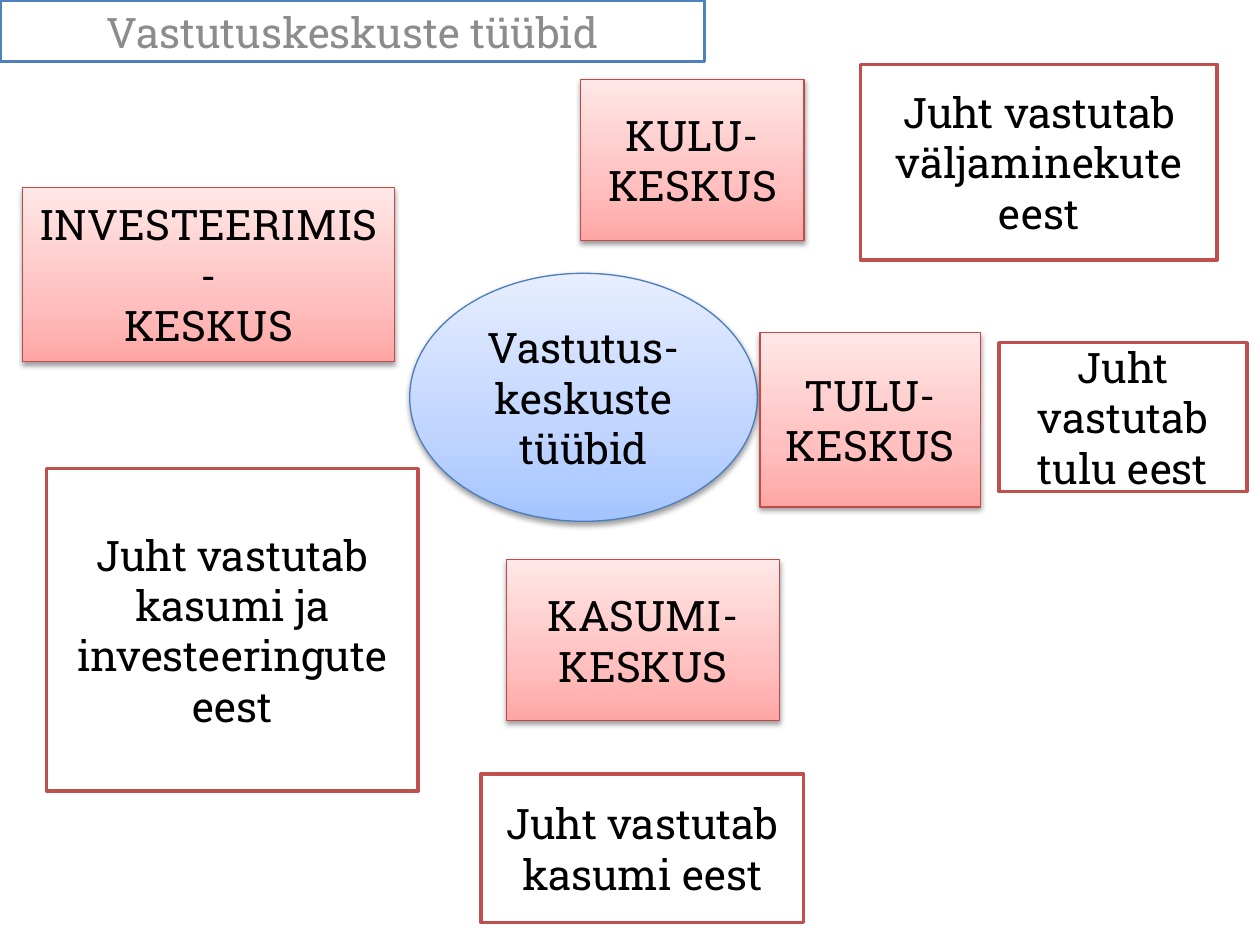
from copy import deepcopy
from dataclasses import dataclass

from lxml import etree
from pptx import Presentation
from pptx.dml.color import RGBColor
from pptx.enum.shapes import MSO_SHAPE
from pptx.enum.text import MSO_ANCHOR, PP_ALIGN
from pptx.oxml.ns import qn
from pptx.util import Cm, Pt

RECTANGLE, OVAL = MSO_SHAPE.RECTANGLE, MSO_SHAPE.OVAL
TOP, MIDDLE = MSO_ANCHOR.TOP, MSO_ANCHOR.MIDDLE
CENTER = PP_ALIGN.CENTER

COLOURS = {
    "white": "FFFFFF",
    "black": "000000",
    "grey": "8C8C8C",
    "title line": "4F81BD",
    "hub line": "4B7EBC",
    "centre line": "BF4C48",
    "duty line": "C0504D",
    "hub dark": "A4C4FF",
    "hub middle": "BFD4FF",
    "hub light": "E6EEFF",
    "centre dark": "FFA6A5",
    "centre middle": "FFC0BF",
    "centre light": "FFE7E7",
}
STOP_POSITIONS = (0, 0.35, 1)
FONT_FORMAT = {"name": "Roboto Slab", "size": Pt(24)}


@dataclass(frozen=True)
class Style:
    """Look shared by boxes of one kind."""

    fills: tuple[str, ...]
    line: str
    line_width: float
    outline: MSO_SHAPE = RECTANGLE
    text_colour: str = "black"
    anchor: MSO_ANCHOR = MIDDLE


@dataclass(frozen=True)
class Box:
    """Text box with its place in centimetres."""

    text: str
    left: float
    top: float
    width: float
    height: float
    style: Style


TITLE = Style(("white",), "title line", 2, text_colour="grey", anchor=TOP)
HUB = Style(("hub dark", "hub middle", "hub light"), "hub line", 0.75, OVAL)
CENTRE = Style(("centre dark", "centre middle", "centre light"), "centre line", 0.75)
DUTY = Style(("white",), "duty line", 2)

BOXES = (
    Box("Vastutuskeskuste tüübid", 0, 0, 14.2, 1.24, TITLE),
    Box("Vastutus-keskuste tüübid", 8.26, 5.51, 7.01, 5, HUB),
    Box("KULU-KESKUS", 11.71, 1.6, 4.5, 3.25, CENTRE),
    Box("TULU-KESKUS", 15.32, 6.71, 4.45, 3.51, CENTRE),
    Box("KASUMI-KESKUS", 10.21, 11.28, 5.51, 3.25, CENTRE),
    Box("INVESTEERIMIS-\nKESKUS", 0.46, 3.78, 7.49, 3.51, CENTRE),
    Box("Juht vastutab väljaminekute eest", 17.35, 1.3, 7.19, 3.94, DUTY),
    Box("Juht vastutab tulu eest", 20.14, 6.91, 5, 3, DUTY),
    Box("Juht vastutab kasumi eest", 9.7, 15.6, 6.5, 3, DUTY),
    Box("Juht vastutab kasumi ja investeeringute\neest", 0.94, 9.45, 7.49, 6.5, DUTY),
)


def colour(name: str) -> RGBColor:
    """Return the named colour."""
    return RGBColor.from_string(COLOURS[name])


def add_gradient(shape, names: tuple[str, ...]) -> None:
    """Fill the shape with three colours from bottom to top."""
    shape.fill.gradient()
    shape.fill.gradient_angle = 90
    stop_list = shape._element.spPr.find(".//" + qn("a:gsLst"))
    stop_list.append(deepcopy(stop_list[0]))
    for stop, name, position in zip(shape.fill.gradient_stops, names, STOP_POSITIONS):
        stop.color.rgb = colour(name)
        stop.position = position


def add_shadow(shape) -> None:
    """Put a soft shadow below the shape."""
    effects = shape._element.spPr.find(qn("a:effectLst"))
    shadow = etree.SubElement(
        effects, qn("a:outerShdw"),
        {"blurRad": "40000", "dist": "20000", "dir": "5400000", "rotWithShape": "0"},
    )
    shade = etree.SubElement(shadow, qn("a:srgbClr"), {"val": COLOURS["black"]})
    etree.SubElement(shade, qn("a:alpha"), {"val": "38000"})


def add_box(slide, box: Box) -> None:
    """Draw one box with its text."""
    style = box.style
    place = [Cm(length) for length in (box.left, box.top, box.width, box.height)]
    shape = slide.shapes.add_shape(style.outline, *place)
    shape.shadow.inherit = False
    shape.line.color.rgb = colour(style.line)
    shape.line.width = Pt(style.line_width)
    if len(style.fills) > 1:
        add_gradient(shape, style.fills)
        add_shadow(shape)
    else:
        shape.fill.solid()
        shape.fill.fore_color.rgb = colour(style.fills[0])
    frame = shape.text_frame
    frame.text = box.text
    frame.word_wrap = True
    frame.vertical_anchor = style.anchor
    for paragraph in frame.paragraphs:
        paragraph.alignment = CENTER
        for run in paragraph.runs:
            for attribute, value in FONT_FORMAT.items():
                setattr(run.font, attribute, value)
            run.font.color.rgb = colour(style.text_colour)


def main() -> None:
    """Build the slide on responsibility centre types."""
    presentation = Presentation()
    presentation.slide_width = Cm(25.4)
    presentation.slide_height = Cm(19.05)
    slide = presentation.slides.add_slide(presentation.slide_layouts[6])
    for box in BOXES:
        add_box(slide, box)
    presentation.save("out.pptx")


if __name__ == "__main__":
    main()
